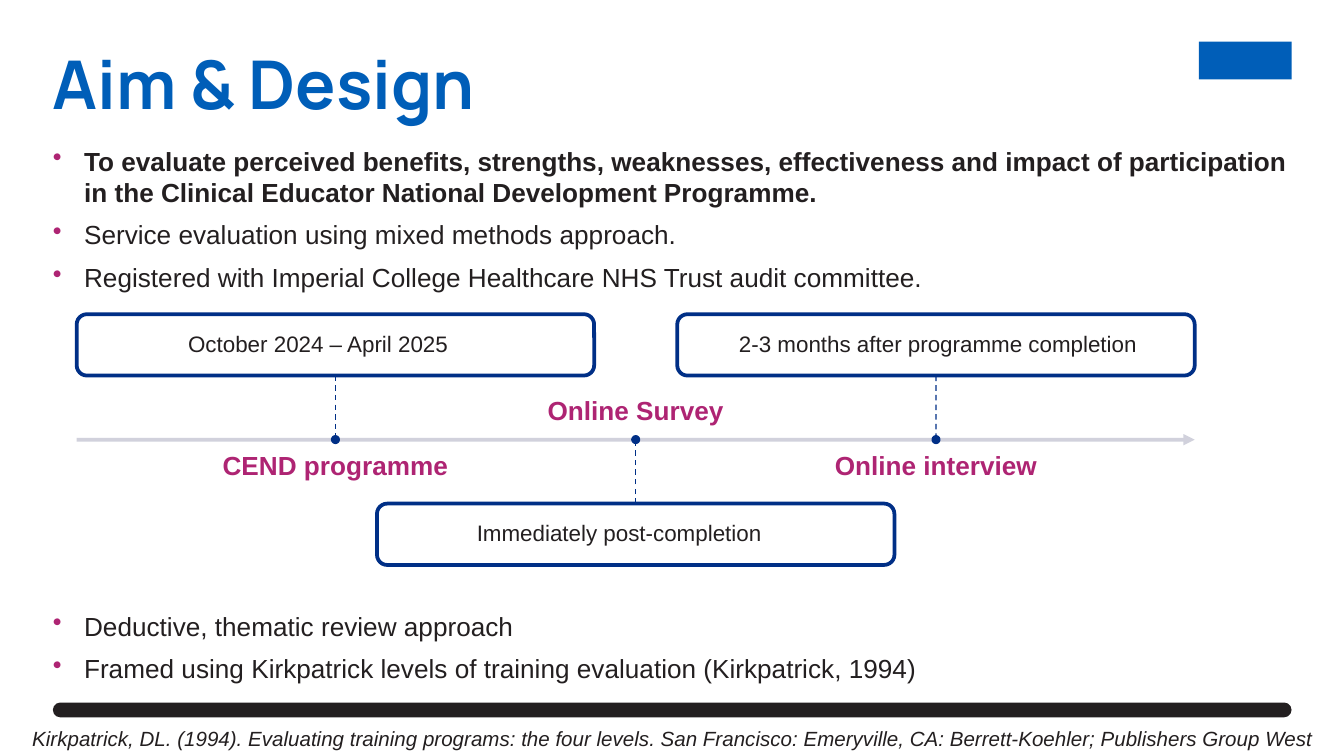
import pptx
import pptx.dml.color
import pptx.enum.dml
import pptx.enum.shapes
import pptx.enum.text
import pptx.oxml.ns
import pptx.util
from lxml import etree

Cm = pptx.util.Cm
Pt = pptx.util.Pt
Shape = pptx.enum.shapes.MSO_SHAPE
Anchor = pptx.enum.text.MSO_ANCHOR
Align = pptx.enum.text.PP_ALIGN
qn = pptx.oxml.ns.qn

INK, BLUE, NAVY, PINK = "231F20", "005EB8", "002F86", "AE2473"
GREY, WHITE = "CCCDD9", "FFFFFF"

MARGIN, CONTENT_WIDTH = 1.0, 23.41
AXIS_LEFT, AXIS_RIGHT, AXIS_Y = 1.45, 22.58, 8.31
CARD_WIDTH, CARD_HEIGHT, CARD_GAP = 9.78, 1.16, 1.21
LABEL_WIDTH, LABEL_HEIGHT, LABEL_GAP = 8.6, 0.71, 0.25
DOT = 0.1

# Date text, its left inset, stage label, whether the card is above the axis
STAGES = [
    ("October 2024 – April 2025", 2.05, "CEND programme", True),
    ("Immediately post-completion", 1.83, "Online Survey", False),
    ("2-3 months after programme completion", 1.11, "Online interview", True),
]


def color(hex_string):
    return pptx.dml.color.RGBColor.from_string(hex_string)


def add_bullet(para):
    para_props = para._p.get_or_add_pPr()
    para_props.set("marL", str(Cm(0.59)))
    para_props.set("indent", str(-Cm(0.59)))
    bullet_color = etree.SubElement(para_props, qn("a:buClr"))
    etree.SubElement(bullet_color, qn("a:srgbClr"), val=PINK)
    etree.SubElement(para_props, qn("a:buChar"), char="•")


def write(para, text, size=14, font="Arial", ink=INK, bold=False, italic=False,
          align=Align.LEFT, spacing=None, after=None, bullet=False):
    if bullet:
        add_bullet(para)
    para.alignment = align
    if spacing is not None:
        para.line_spacing = spacing
    if after is not None:
        para.space_after = Pt(after)
    span = para.add_run()
    span.text = text
    span.font.name = font
    span.font.size = Pt(size)
    span.font.bold = bold
    span.font.italic = italic
    span.font.color.rgb = color(ink)


def set_frame(box, anchor=Anchor.TOP, left=0.0):
    frame = box.text_frame
    frame.word_wrap = True
    frame.vertical_anchor = anchor
    frame.margin_left = Cm(left)
    frame.margin_top = frame.margin_right = frame.margin_bottom = 0
    return frame


def add_text(page, left, top, width, height, text, anchor=Anchor.TOP, **style):
    box = page.shapes.add_textbox(Cm(left), Cm(top), Cm(width), Cm(height))
    write(set_frame(box, anchor).paragraphs[0], text, **style)


def add_bullets(page, top, height, items):
    """Add a bulleted list of (text, bold) pairs."""
    box = page.shapes.add_textbox(Cm(MARGIN), Cm(top), Cm(CONTENT_WIDTH), Cm(height))
    frame = set_frame(box)
    for index, (text, bold) in enumerate(items):
        para = frame.add_paragraph() if index else frame.paragraphs[0]
        write(para, text, bold=bold, after=6, bullet=True)


def add_block(page, kind, left, top, width, height, fill, line=None):
    block = page.shapes.add_shape(kind, Cm(left), Cm(top), Cm(width), Cm(height))
    block.shadow.inherit = False
    block.fill.solid()
    block.fill.fore_color.rgb = color(fill)
    if line:
        block.line.color.rgb = color(line)
        block.line.width = Pt(2)
    else:
        block.line.fill.background()
    return block


def add_line(page, start, end, ink, width):
    line = page.shapes.add_connector(
        pptx.enum.shapes.MSO_CONNECTOR.STRAIGHT, *map(Cm, start + end))
    line.line.color.rgb = color(ink)
    line.line.width = Pt(width)
    etree.SubElement(line._element.spPr, qn("a:effectLst"))
    return line


def add_axis(page):
    axis = add_line(page, (AXIS_LEFT, AXIS_Y), (AXIS_RIGHT, AXIS_Y), GREY, 2)
    stroke = axis.line._get_or_add_ln()
    etree.SubElement(stroke, qn("a:tailEnd"), type="triangle")
    shade = stroke.find(".//" + qn("a:srgbClr"))
    etree.SubElement(shade, qn("a:alpha"), val="90000")


def add_stage(page, left, date, inset, label, above):
    """Add a date card, its dashed stem and axis dot, and the label opposite."""
    middle = left + CARD_WIDTH / 2
    if above:
        card_top = AXIS_Y - CARD_GAP - CARD_HEIGHT
        label_top = AXIS_Y + LABEL_GAP
    else:
        card_top = AXIS_Y + CARD_GAP
        label_top = AXIS_Y - LABEL_GAP - LABEL_HEIGHT
    card = add_block(page, Shape.ROUNDED_RECTANGLE, left, card_top,
                     CARD_WIDTH, CARD_HEIGHT, WHITE, NAVY)
    write(set_frame(card, Anchor.MIDDLE, inset).paragraphs[0], date,
          size=12, spacing=0.9)

    stem = add_line(page, (middle, card_top), (middle, AXIS_Y), NAVY, 0.75)
    stem.line.dash_style = pptx.enum.dml.MSO_LINE.DASH
    stem.begin_connect(card, 2 if above else 0)
    add_block(page, Shape.OVAL, middle - DOT / 2, AXIS_Y - DOT / 2,
              DOT, DOT, NAVY, NAVY)
    add_text(page, middle - LABEL_WIDTH / 2, label_top, LABEL_WIDTH, LABEL_HEIGHT,
             label, anchor=Anchor.TOP if above else Anchor.BOTTOM,
             ink=PINK, bold=True, align=Align.CENTER, spacing=0.9)


def main():
    deck = pptx.Presentation()
    deck.slide_width, deck.slide_height = Cm(25.4), Cm(14.29)
    page = deck.slides.add_slide(deck.slide_layouts[6])

    rule = add_block(page, Shape.ROUNDED_RECTANGLE, MARGIN, 13.28,
                     CONTENT_WIDTH, 0.28, INK)
    rule.adjustments[0] = 0.5
    add_block(page, Shape.RECTANGLE, 22.66, 0.79, 1.75, 0.71, BLUE)

    add_text(page, MARGIN, 0.97, 21.13, 1.17, "Aim & Design",
             size=36, font="Manrope", ink=BLUE, bold=True, spacing=0.9)
    add_bullets(page, 2.74, 2.77, [
        ("To evaluate perceived benefits, strengths, weaknesses, effectiveness and "
         "impact of participation in the Clinical Educator National Development "
         "Programme.", True),
        ("Service evaluation using mixed methods approach.", False),
        ("Registered with Imperial College Healthcare NHS Trust audit committee.",
         False),
    ])

    add_axis(page)
    step = (AXIS_RIGHT - AXIS_LEFT - CARD_WIDTH) / (len(STAGES) - 1)
    for index, stage in enumerate(STAGES):
        add_stage(page, AXIS_LEFT + index * step, *stage)

    add_bullets(page, 11.53, 1.52, [
        ("Deductive, thematic review approach", False),
        ("Framed using Kirkpatrick levels of training evaluation "
         "(Kirkpatrick, 1994)", False),
    ])
    add_text(page, 0.61, 13.72, 24.79, 0.5,
             "Kirkpatrick, DL. (1994). Evaluating training programs: the four levels. "
             "San Francisco: Emeryville, CA: Berrett-Koehler; Publishers Group West",
             size=11, italic=True)
    deck.save("out.pptx")


if __name__ == "__main__":
    main()
